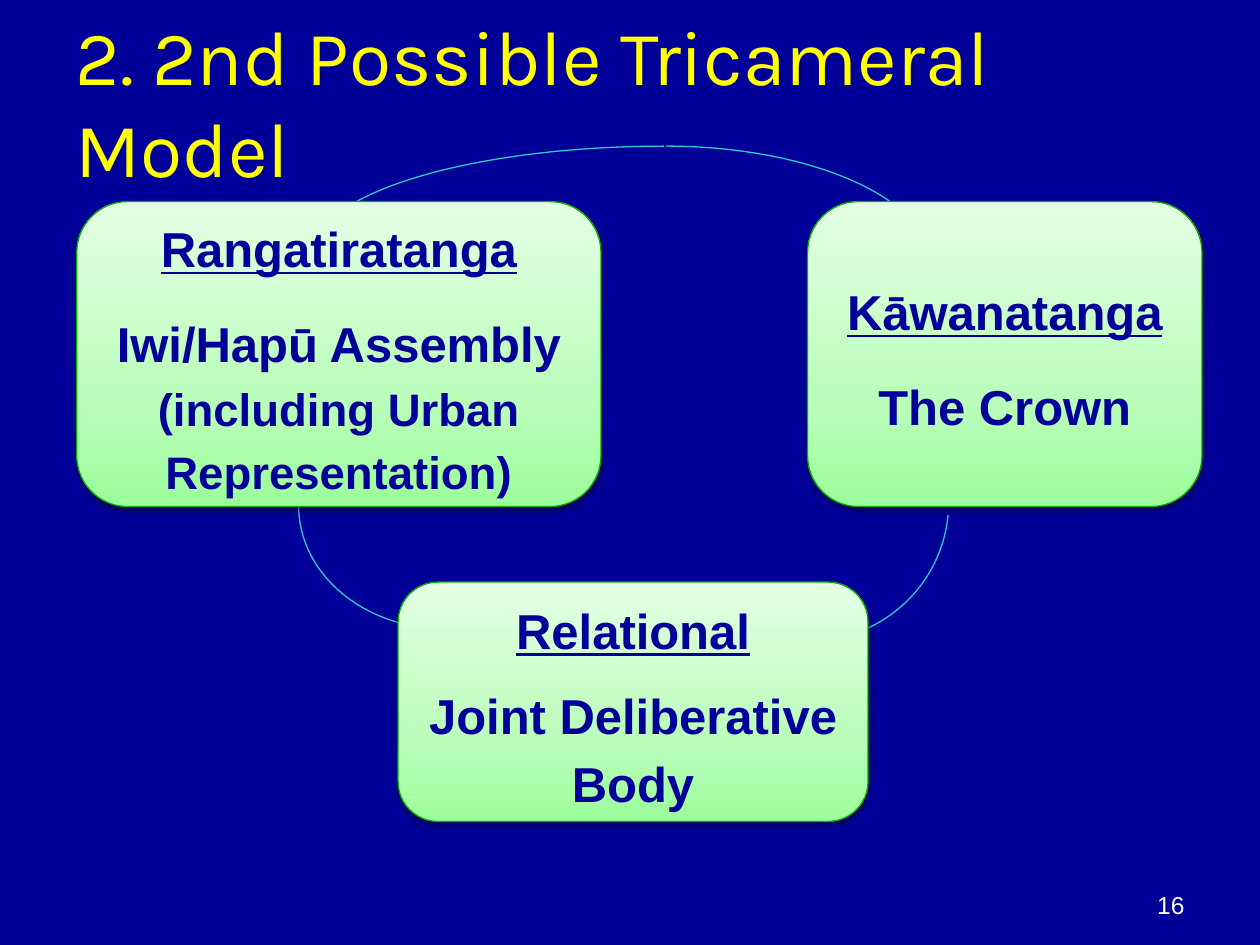
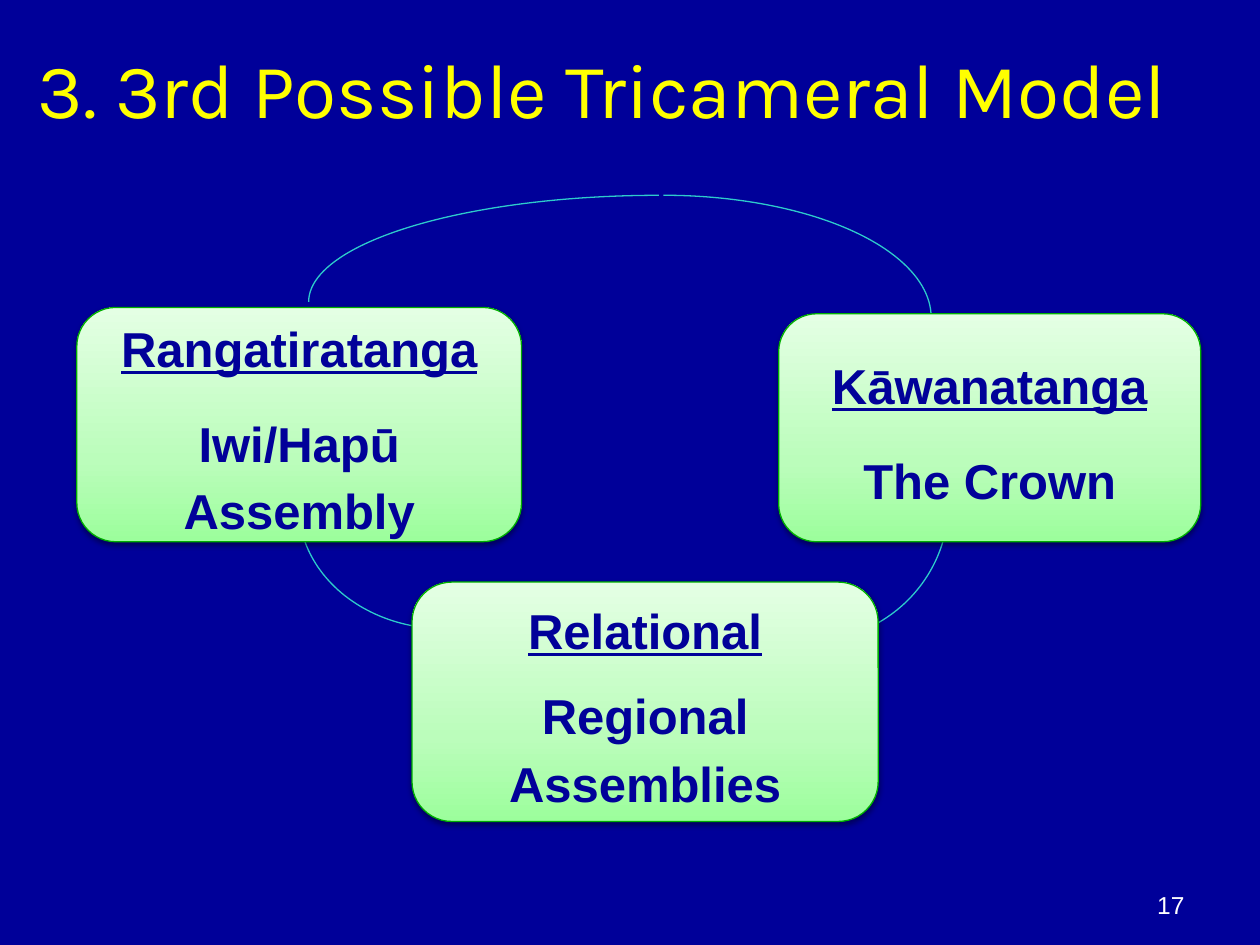
from copy import deepcopy

from lxml import etree
from pptx import Presentation
from pptx import util as u
from pptx.dml import color
from pptx.enum import shapes, text
from pptx.oxml import ns

COLOURS = {
    "background": "000099", "title": "FFFF00", "number": "FFFFFF", "arc": "2ECBCB",
    "outline": "00AF00", "chamber_text": "010199", "shadow": "000000",
}
CHAMBER_GRADIENT = ((0, "9CFE9C"), (0.35, "BBFDBB"), (1, "E4FFE4"))
TITLE_FONT = {"name": "Karla", "size": u.Pt(44)}
NUMBER_FONT = {"name": "Arial", "size": u.Pt(14)}
CHAMBER_FONT = {"name": "Arial", "size": u.Pt(28), "bold": True}
CHAMBER_PARAGRAPH = {
    "alignment": text.PP_ALIGN.CENTER, "line_spacing": 1.15, "space_after": u.Pt(10),
}
MIDDLE_FRAME = {
    "word_wrap": True, "auto_size": text.MSO_AUTO_SIZE.NONE,
    "vertical_anchor": text.MSO_ANCHOR.MIDDLE,
}
BOTTOM_FRAME = {**MIDDLE_FRAME, "vertical_anchor": text.MSO_ANCHOR.BOTTOM}
NUMBER_BOX = (516.24, 491.76, 167.76, 37.44)
LOWER_ARCS = (
    ((170.64, 218.88, 166.32, 140.4), ("flipH", "flipV"), (160.7, 0)),
    ((381.6, 207.36, 160.56, 159.12), ("flipV",), (160.68, 212.8)),
)
RIGHT_ARC_SIZE = (306, 139.68)
LEFT_ARC_SIZE = (400.32, 121.68)

RANGATIRATANGA = "Rangatiratanga"
KAWANATANGA = ("Kāwanatanga", [("The Crown", 28)])
MODELS = (
    {
        "title": "2. 2nd Possible Tricameral Model",
        "title_box": (36, 23.04, 669.6, 69.12),
        "number": "16",
        "arch": (179.28, 227.52, 83.52),
        "chambers": (
            ((43.92, 115.2, 299.52, 174.24), RANGATIRATANGA,
             [("Iwi/Hapū Assembly ", 28), ("(including Urban Representation)", 26)], 5.6),
            ((461.52, 115.2, 225.36, 174.24), *KAWANATANGA, 5.6),
            ((227.52, 332.64, 268.56, 136.8), "Relational",
             [("Joint Deliberative Body", 28)], 0),
        ),
    },
    {
        "title": "3. 3rd Possible Tricameral Model",
        "title_box": (14.4, 0.72, 691.92, 99.36),
        "number": "17",
        "arch": (176.4, 226.08, 111.6),
        "chambers": (
            ((43.92, 175.68, 254.16, 133.92), RANGATIRATANGA,
             [("Iwi/Hapū Assembly", 28)], 5.6),
            ((444.96, 179.28, 241.2, 130.32), *KAWANATANGA, 5.6),
            ((235.44, 332.64, 266.4, 136.8), "Relational",
             [("Regional Assemblies", 28)], 0),
        ),
    },
)


def rgb(name):
    """Return the named colour."""
    return color.RGBColor.from_string(COLOURS[name])


def set_formats(target, formats):
    """Set every attribute in a dict of format values."""
    for name, value in formats.items():
        setattr(target, name, value)


def points(box):
    """Convert a box in points to lengths."""
    return [u.Pt(length) for length in box]


def add_run(paragraph, words, font, colour):
    """Add a formatted run to a paragraph."""
    run = paragraph.add_run()
    run.text = words
    set_formats(run.font, font)
    run.font.color.rgb = rgb(colour)


def place_title(slide, box, words):
    """Move the title placeholder to its box and fill it."""
    title = slide.shapes.title
    set_formats(title, dict(zip(("left", "top", "width", "height"), points(box))))
    set_formats(title.text_frame, MIDDLE_FRAME)
    paragraph = title.text_frame.paragraphs[0]
    paragraph.alignment = text.PP_ALIGN.LEFT
    add_run(paragraph, words, TITLE_FONT, "title")


def add_number(slide, box, number):
    """Write the slide number at the lower right of its box."""
    frame = slide.shapes.add_textbox(*points(box)).text_frame
    set_formats(frame, BOTTOM_FRAME)
    frame.paragraphs[0].alignment = text.PP_ALIGN.RIGHT
    add_run(frame.paragraphs[0], number, NUMBER_FONT, "number")


def add_outlined(slide, kind, box, line_colour):
    """Add a preset shape with a thin line and no shadow."""
    shape = slide.shapes.add_shape(kind, *points(box))
    shape.shadow.inherit = False
    shape.line.color.rgb = rgb(line_colour)
    shape.line.width = u.Pt(0.75)
    return shape


def add_arc(slide, box, flips=(), angles=(162, 0)):
    """Draw one linking arc in its box."""
    arc = add_outlined(slide, shapes.MSO_SHAPE.ARC, box, "arc")
    arc.fill.background()
    for index, angle in enumerate(angles):
        arc.adjustments[index] = angle
    for flip in flips:
        arc.element.spPr.xfrm.set(flip, "1")


def add_ring(slide, left, right, top):
    """Draw the lower arcs and the arch that link the chambers."""
    for arc in LOWER_ARCS:
        add_arc(slide, *arc)
    add_arc(slide, (right, top, *RIGHT_ARC_SIZE))
    add_arc(slide, (left, top, *LEFT_ARC_SIZE), ("flipH",))


def fill_gradient(shape):
    """Fill a chamber with green that fades upwards."""
    shape.fill.gradient()
    shape.fill.gradient_angle = 90
    stops = shape.element.spPr.find(".//" + ns.qn("a:gsLst"))
    stops.append(deepcopy(stops[0]))
    for stop, (position, colour) in zip(shape.fill.gradient_stops, CHAMBER_GRADIENT):
        stop.position = position
        stop.color.rgb = color.RGBColor.from_string(colour)


def drop_shadow(shape):
    """Give a chamber a soft shadow below it."""
    effects = shape.element.spPr.find(ns.qn("a:effectLst"))
    shadow = etree.SubElement(
        effects, ns.qn("a:outerShdw"), blurRad=str(u.Pt(3.15)), dist=str(u.Pt(1.57)),
        dir="5400000", rotWithShape="0")
    colour = etree.SubElement(shadow, ns.qn("a:srgbClr"), val=COLOURS["shadow"])
    etree.SubElement(colour, ns.qn("a:alpha"), val="38000")


def add_chamber(slide, box, heading, members, gap):
    """Draw a chamber with an underlined heading above its members."""
    shape = add_outlined(slide, shapes.MSO_SHAPE.ROUNDED_RECTANGLE, box, "outline")
    fill_gradient(shape)
    drop_shadow(shape)
    frame = shape.text_frame
    set_formats(frame, MIDDLE_FRAME)
    first, second = frame.paragraphs[0], frame.add_paragraph()
    for paragraph in (first, second):
        set_formats(paragraph, CHAMBER_PARAGRAPH)
    second.space_before = u.Pt(gap)
    add_run(first, heading, {**CHAMBER_FONT, "underline": True}, "chamber_text")
    for words, size in members:
        add_run(second, words, {**CHAMBER_FONT, "size": u.Pt(size)}, "chamber_text")


def add_model_slide(presentation, model):
    """Build one slide showing a three-chamber model."""
    slide = presentation.slides.add_slide(presentation.slide_layouts[5])
    place_title(slide, model["title_box"], model["title"])
    add_number(slide, NUMBER_BOX, model["number"])
    add_ring(slide, *model["arch"])
    for chamber in model["chambers"]:
        add_chamber(slide, *chamber)


def main():
    """Build and save the presentation."""
    presentation = Presentation()
    set_formats(presentation, {"slide_width": u.Pt(720), "slide_height": u.Pt(540)})
    background = presentation.slide_master.background.fill
    background.solid()
    background.fore_color.rgb = rgb("background")
    for model in MODELS:
        add_model_slide(presentation, model)
    presentation.save("out.pptx")


if __name__ == "__main__":
    main()
